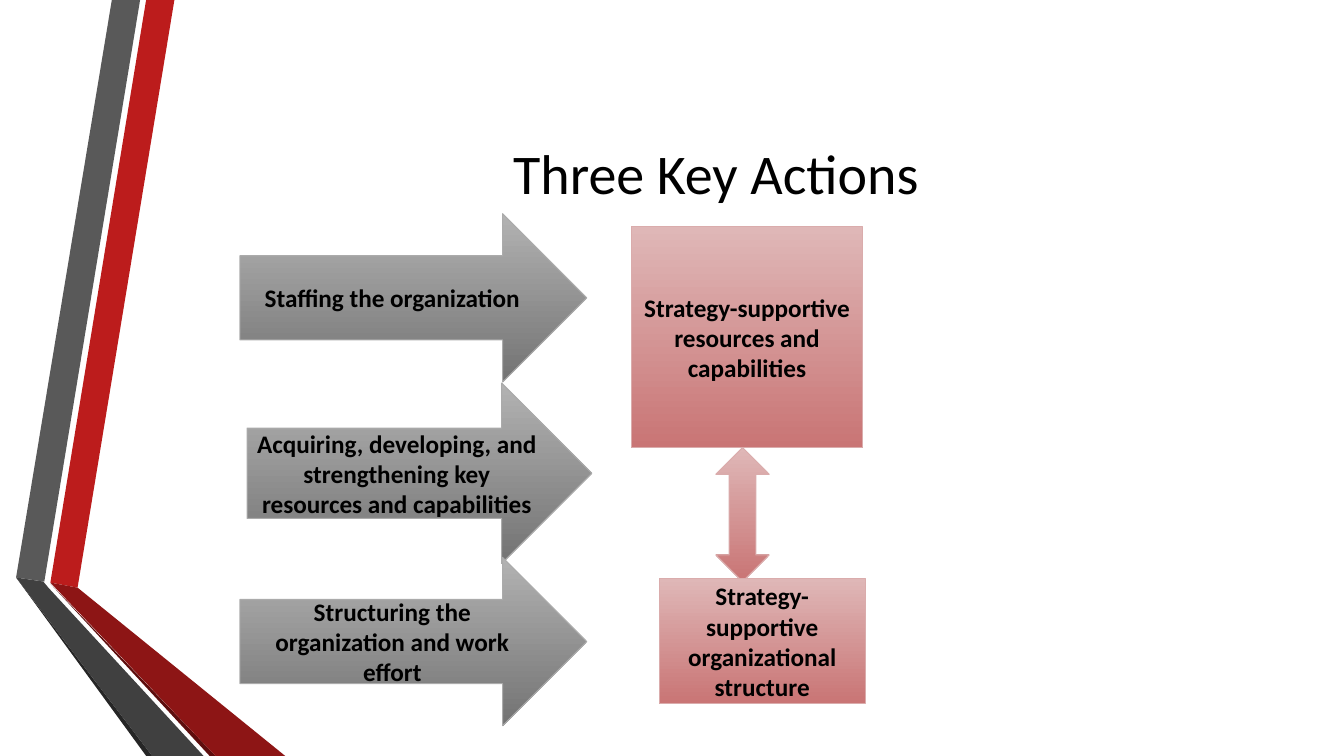
from pptx import Presentation
from pptx.dml.color import RGBColor
from pptx.enum.shapes import MSO_SHAPE
from pptx.enum.text import MSO_ANCHOR, PP_ALIGN
from pptx.util import Pt

PX = 9144  # 100 px to the inch
ARROW = MSO_SHAPE.RIGHT_ARROW
BOX = MSO_SHAPE.RECTANGLE
LINK = MSO_SHAPE.UP_DOWN_ARROW
MIDDLE = MSO_ANCHOR.MIDDLE
CENTER = PP_ALIGN.CENTER

HEX = {
    "red": "BC1C1C", "grey": "595959",
    "dark red": "8D1515", "dark grey": "404040",
    "deep red": "5E0E0E", "deep grey": "262626",
    "text": "000000",
}
# Gradient top, gradient bottom, outline
TONES = {
    "grey": ("B2B2B2", "737373", "ABABAB"),
    "rose": ("DFB7B7", "C97575", "DAACAC"),
}
TITLE = {"name": "Calibri", "size": Pt(40), "bold": False}
LABEL = {"name": "Calibri", "size": Pt(18), "bold": True}

# Folded ribbons along the left edge
BANDS = [
    ("red", [(50, 578), (77, 583), (173, 0), (145, 0)]),
    ("grey", [(139, 0), (111, 0), (16, 573), (44, 577)]),
    ("deep grey", [(16, 573), (145, 750), (151, 750)]),
    ("deep red", [(50, 579), (208, 750), (214, 750)]),
    ("dark red", [(50, 578), (214, 750), (283, 750), (77, 583)]),
    ("dark grey", [(202, 750), (48, 583), (43, 577), (16, 573), (151, 750)]),
]

# Preset, tone, left, top, width, height, label
PARTS = [
    (ARROW, "grey", 238, 212, 344, 167, "Staffing the organization"),
    (ARROW, "grey", 245, 380, 342, 179,
     "Acquiring, developing, and strengthening key resources and capabilities"),
    (ARROW, "grey", 238, 553, 344, 167,
     "Structuring the organization and work effort"),
    (BOX, "rose", 626, 225, 230, 219,
     "Strategy-supportive resources and capabilities"),
    (LINK, "rose", 710, 444, 53, 133, ""),
    (BOX, "rose", 654, 574, 204, 124,
     "Strategy-supportive organizational structure"),
]


def rgb(code):
    return RGBColor.from_string(code)


def emu(*sizes):
    return [size * PX for size in sizes]


def write(shape, text, style):
    frame = shape.text_frame
    frame.word_wrap = True
    frame.vertical_anchor = MIDDLE
    para = frame.paragraphs[0]
    para.alignment = CENTER
    run = para.add_run()
    run.text = text
    for key, value in style.items():
        setattr(run.font, key, value)
    run.font.color.rgb = rgb(HEX["text"])


def add_band(slide, color, points):
    pen = slide.shapes.build_freeform(*points[0], scale=PX)
    pen.add_line_segments(points[1:], close=True)
    band = pen.convert_to_shape()
    band.shadow.inherit = False
    band.fill.solid()
    band.fill.fore_color.rgb = rgb(HEX[color])
    band.line.fill.background()


def add_title(slide, text):
    box = slide.shapes.add_textbox(*emu(162, 75, 1096, 192))
    write(box, text, TITLE)


def add_part(slide, kind, tone, left, top, width, height, text):
    part = slide.shapes.add_shape(kind, *emu(left, top, width, height))
    part.shadow.inherit = False
    *shades, edge = TONES[tone]
    part.fill.gradient()
    part.fill.gradient_angle = 270
    for place, (stop, shade) in enumerate(zip(part.fill.gradient_stops, shades)):
        stop.position = place
        stop.color.rgb = rgb(shade)
    part.line.color.rgb = rgb(edge)
    part.line.width = Pt(0.75)
    if text:
        write(part, text, LABEL)


def main():
    deck = Presentation()
    deck.slide_width, deck.slide_height = emu(1333, 750)
    slide = deck.slides.add_slide(deck.slide_layouts[6])

    # Backdrop
    for band in BANDS:
        add_band(slide, *band)

    # Heading and diagram
    add_title(slide, "Three Key Actions")
    for part in PARTS:
        add_part(slide, *part)

    deck.save("out.pptx")


if __name__ == "__main__":
    main()
